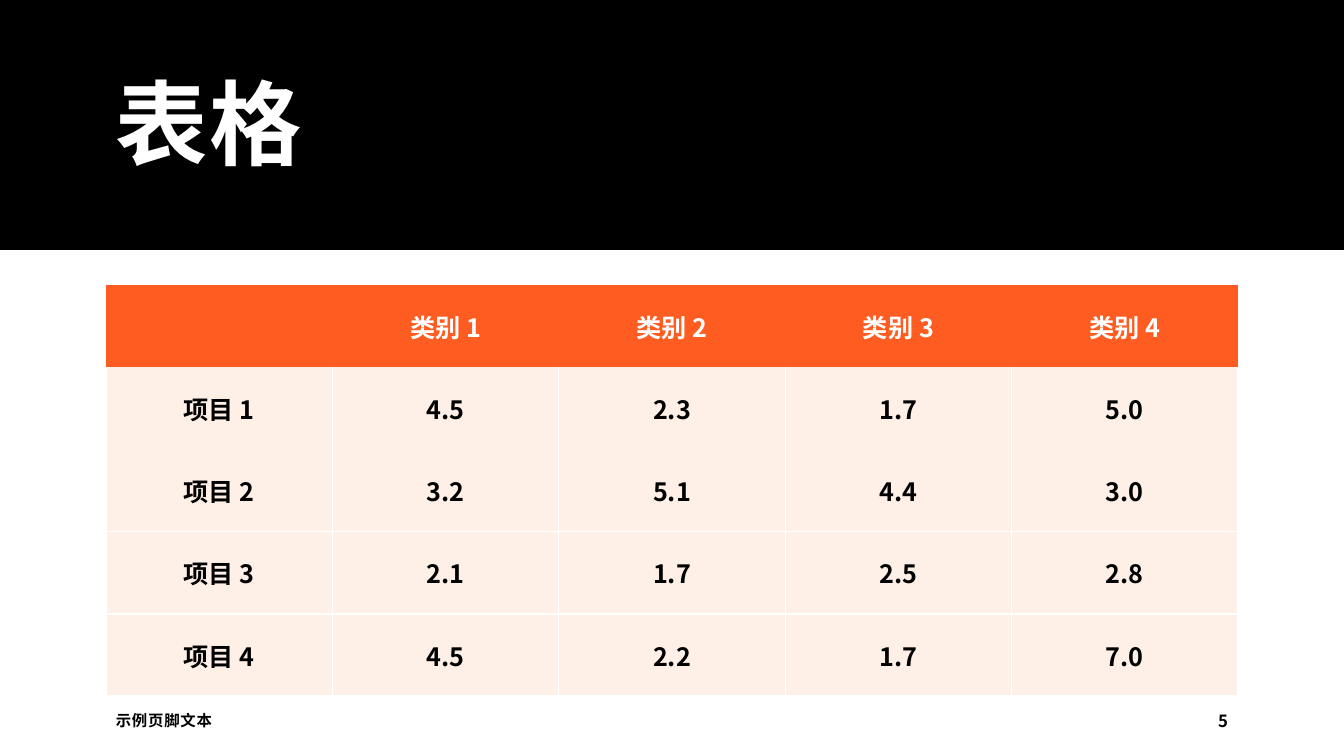
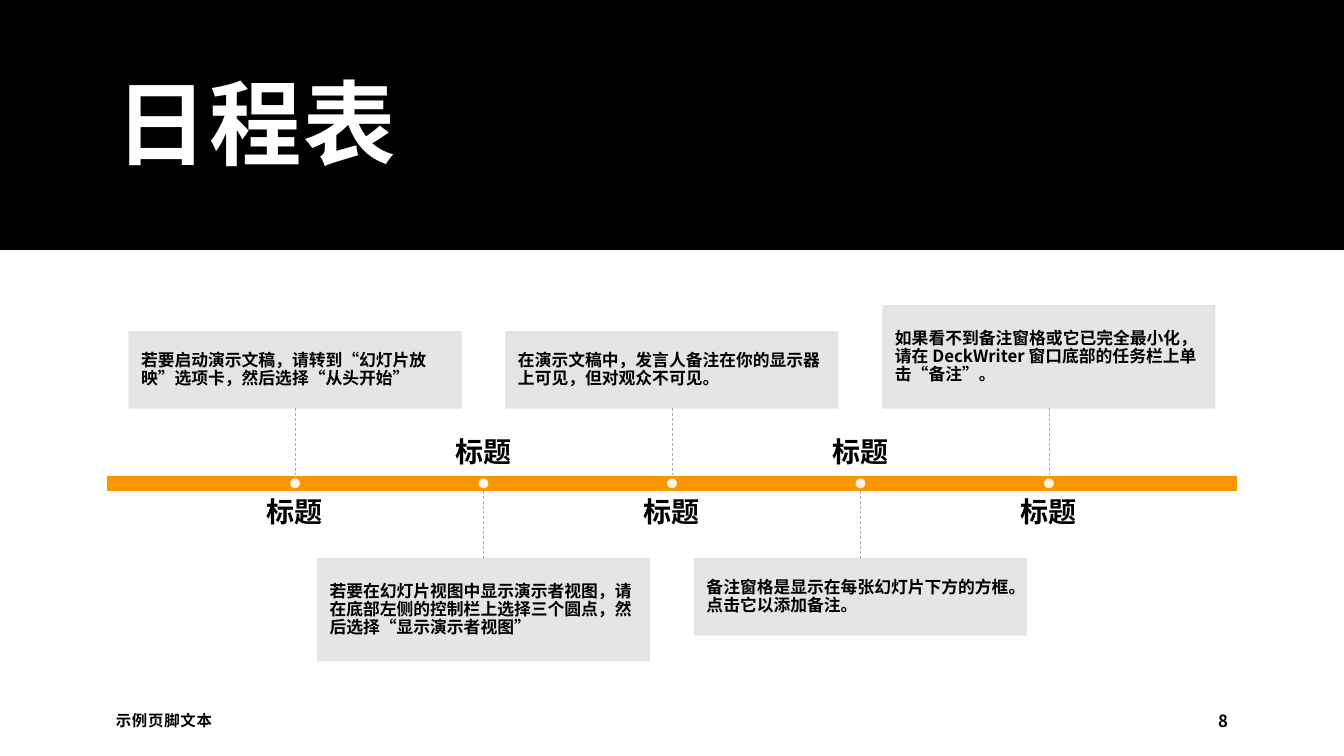
from dataclasses import dataclass

from lxml.etree import SubElement
from pptx import Presentation
from pptx.dml.color import RGBColor
from pptx.enum.dml import MSO_LINE_DASH_STYLE as Dash
from pptx.enum.lang import MSO_LANGUAGE_ID as Language
from pptx.enum.shapes import MSO_CONNECTOR_TYPE as Connector, MSO_SHAPE as Preset
from pptx.enum.text import MSO_ANCHOR as Anchor, PP_ALIGN as Align
from pptx.oxml import parse_xml
from pptx.oxml.ns import nsdecls, qn
from pptx.util import Cm, Pt


@dataclass(frozen=True)
class Theme:
    font: str = "Noto Sans CJK SC"
    black: str = "000000"
    white: str = "FFFFFF"
    header: str = "FF5C21"
    body: str = "FEEFE7"
    bar: str = "F99700"
    box: str = "E3E3E3"
    leader: str = "ACACAC"
    title_size: int = 66
    heading_size: int = 20
    table_size: int = 18
    note_size: int = 12
    footer_size: int = 11
    number_size: int = 12


THEME = Theme()
SLIDE_WIDTH, SLIDE_HEIGHT = 33.87, 19.05
MARGIN = 2.67
CONTENT_WIDTH = SLIDE_WIDTH - 2 * MARGIN
NO_GRID_STYLE = "{2D5ABB26-0587-4C30-8999-92F81FD0307C}"

TABLE_ROWS = [
    ["", "类别 1", "类别 2", "类别 3", "类别 4"],
    ["项目 1", "4.5", "2.3", "1.7", "5.0"],
    ["项目 2", "3.2", "5.1", "4.4", "3.0"],
    ["项目 3", "2.1", "1.7", "2.5", "2.8"],
    ["项目 4", "4.5", "2.2", "1.7", "7.0"],
]

MILESTONES = [
    ("标题", "若要启动演示文稿，请转到“幻灯片放映”选项卡，然后选择“从头开始”", 1.92),
    ("标题", "若要在幻灯片视图中显示演示者视图，请在底部左侧的控制栏上选择三个圆点，然后选择“显示演示者视图”", 2.57),
    ("标题", "在演示文稿中，发言人备注在你的显示器上可见，但对观众不可见。", 1.92),
    ("标题", "备注窗格是显示在每张幻灯片下方的方框。点击它以添加备注。", 1.92),
    ("标题", "如果看不到备注窗格或它已完全最小化，请在 DeckWriter 窗口底部的任务栏上单击“备注”。", 2.57),
]


def write_text(text_frame, text, size, color=THEME.black, align=Align.LEFT,
               line_spacing=1.0, tracking=0):
    text_frame.text = text
    paragraph = text_frame.paragraphs[0]
    paragraph.alignment = align
    paragraph.line_spacing = line_spacing
    for run in paragraph.runs:
        font = run.font
        font.size = Pt(size)
        font.bold = True
        font.name = THEME.font
        font.language_id = Language.SIMPLIFIED_CHINESE
        font.color.rgb = RGBColor.from_string(color)
        properties = run._r.get_or_add_rPr()
        SubElement(properties, qn("a:ea")).set("typeface", THEME.font)
        if tracking:
            properties.set("spc", str(round(tracking * 100)))


def set_frame(text_frame, anchor, inset=None):
    text_frame.word_wrap = True
    text_frame.vertical_anchor = anchor
    if inset is not None:
        text_frame.margin_left = text_frame.margin_right = Cm(inset)
        text_frame.margin_top = text_frame.margin_bottom = Cm(inset)


def add_text(slide, left, top, width, height, text, size, anchor=Anchor.MIDDLE,
             inset=None, **style):
    shape = slide.shapes.add_textbox(Cm(left), Cm(top), Cm(width), Cm(height))
    set_frame(shape.text_frame, anchor, inset)
    write_text(shape.text_frame, text, size, **style)


def add_block(slide, preset, left, top, width, height, fill, line=None, opacity=100):
    shape = slide.shapes.add_shape(preset, Cm(left), Cm(top), Cm(width), Cm(height))
    shape.shadow.inherit = False
    shape.fill.solid()
    shape.fill.fore_color.rgb = RGBColor.from_string(fill)
    if line:
        shape.line.color.rgb = RGBColor.from_string(line)
        shape.line.width = Pt(1)
    else:
        shape.line.fill.background()
    if opacity < 100:
        for color in shape._element.spPr.iter(qn("a:srgbClr")):
            SubElement(color, qn("a:alpha")).set("val", str(opacity * 1000))
    return shape


def add_leader(slide, x, start, end):
    connector = slide.shapes.add_connector(
        Connector.STRAIGHT, Cm(x), Cm(start), Cm(x), Cm(end))
    connector.line.color.rgb = RGBColor.from_string(THEME.leader)
    connector.line.width = Pt(0.5)
    connector.line.dash_style = Dash.DASH
    SubElement(connector._element.spPr, qn("a:effectLst"))


def set_borders(cell, sides):
    properties = cell._tc.get_or_add_tcPr()
    for index, side in enumerate(sides):
        properties.insert(index, parse_xml(
            f'<a:ln{side} {nsdecls("a")} w="12700"><a:solidFill>'
            f'<a:srgbClr val="{THEME.white}"/></a:solidFill></a:ln{side}>'))


def add_data_table(slide, rows, top, row_height):
    frame = slide.shapes.add_table(
        len(rows), len(rows[0]), Cm(MARGIN), Cm(top),
        Cm(CONTENT_WIDTH), Cm(row_height * len(rows)))
    next(frame._element.iter(qn("a:tableStyleId"))).text = NO_GRID_STYLE
    for row_index, values in enumerate(rows):
        is_header = row_index == 0
        for column_index, value in enumerate(values):
            cell = frame.table.cell(row_index, column_index)
            cell.vertical_anchor = Anchor.MIDDLE
            cell.fill.solid()
            cell.fill.fore_color.rgb = RGBColor.from_string(
                THEME.header if is_header else THEME.body)
            write_text(cell.text_frame, value, THEME.table_size,
                       THEME.white if is_header else THEME.black, Align.CENTER)
            if not is_header:
                set_borders(cell, "LR" if row_index == 1 else "LRB")


def add_milestone(slide, x, axis, is_above, heading, note, box_height):
    box_width, box_gap, bar_half = 8.36, 1.9, 0.2
    heading_width, heading_height, heading_gap = 7.6, 1.12, 0.37
    dot = 0.25
    if is_above:
        box_top = axis - box_gap - box_height
        heading_top = axis + heading_gap
        leader = (axis - box_gap, axis - bar_half)
    else:
        box_top = axis + box_gap
        heading_top = axis - heading_gap - heading_height
        leader = (axis + bar_half, axis + box_gap)

    add_text(slide, x - heading_width / 2, heading_top, heading_width, heading_height,
             heading, THEME.heading_size, Anchor.TOP if is_above else Anchor.BOTTOM,
             inset=0, align=Align.CENTER, line_spacing=0.9)
    box = add_block(slide, Preset.RECTANGLE, x - box_width / 2, box_top,
                    box_width, box_height, THEME.box, THEME.box, opacity=90)
    set_frame(box.text_frame, Anchor.MIDDLE, inset=0.3)
    write_text(box.text_frame, note, THEME.note_size, line_spacing=0.9)
    add_leader(slide, x, *leader)
    add_block(slide, Preset.OVAL, x - dot / 2, axis - dot / 2, dot, dot,
              THEME.white, opacity=90)


def add_timeline(slide, milestones, axis, step):
    bar_height = 0.4
    add_block(slide, Preset.RECTANGLE, MARGIN, axis - bar_height / 2,
              CONTENT_WIDTH, bar_height, THEME.bar, THEME.white)
    first = SLIDE_WIDTH / 2 - step * (len(milestones) - 1) / 2
    for index, milestone in enumerate(milestones):
        add_milestone(slide, first + index * step, axis, index % 2 == 0, *milestone)


def add_titled_slide(presentation, title, number):
    slide = presentation.slides.add_slide(presentation.slide_layouts[6])
    add_block(slide, Preset.RECTANGLE, 0, 0, SLIDE_WIDTH, 6.3, THEME.black)
    add_text(slide, MARGIN, 0.89, CONTENT_WIDTH, 4.72, title, THEME.title_size,
             color=THEME.white, line_spacing=0.9, tracking=1.2)
    footer_top, footer_height, number_width = 17.65, 1.02, 2.6
    add_text(slide, MARGIN, footer_top, 9, footer_height, "示例页脚文本",
             THEME.footer_size, tracking=0.5)
    add_text(slide, SLIDE_WIDTH - MARGIN - number_width, footer_top, number_width,
             footer_height, str(number), THEME.number_size, align=Align.RIGHT)
    return slide


def main():
    presentation = Presentation()
    presentation.slide_width = Cm(SLIDE_WIDTH)
    presentation.slide_height = Cm(SLIDE_HEIGHT)
    add_data_table(add_titled_slide(presentation, "表格", 5), TABLE_ROWS,
                   top=7.19, row_height=2.07)
    add_timeline(add_titled_slide(presentation, "日程表", 8), MILESTONES,
                 axis=12.18, step=4.75)
    presentation.save("out.pptx")


if __name__ == "__main__":
    main()
